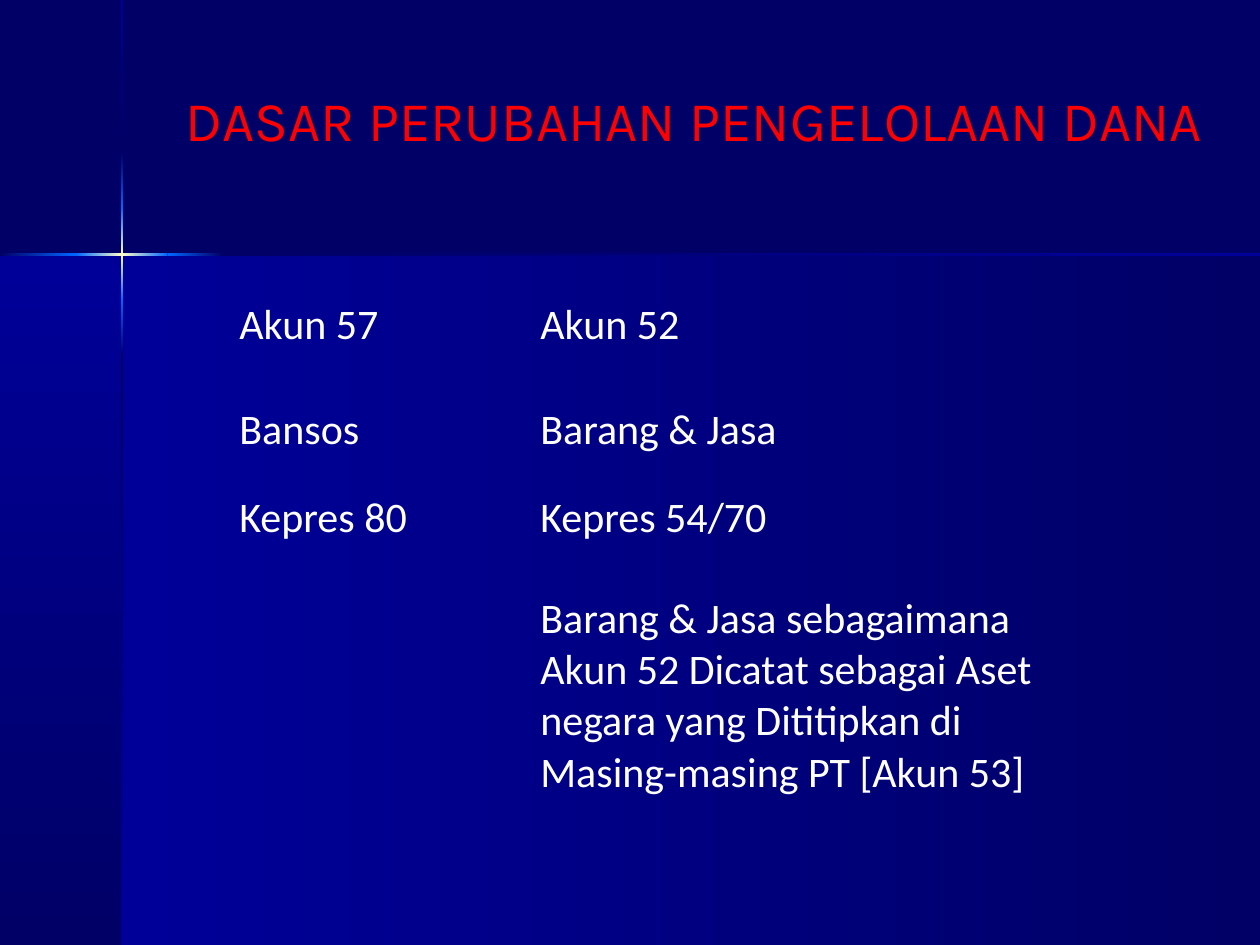
from copy import deepcopy
from pptx import Presentation
from pptx.dml.color import RGBColor
from pptx.enum.shapes import MSO_SHAPE
from pptx.enum.text import MSO_AUTO_SIZE, PP_ALIGN
from pptx.util import Pt

RECT = MSO_SHAPE.RECTANGLE
CENTER = PP_ALIGN.CENTER
GROW = MSO_AUTO_SIZE.SHAPE_TO_FIT_TEXT

NAVY = RGBColor(0x00, 0x00, 0x66)
BLUE = RGBColor(0x00, 0x00, 0x99)
SKY = RGBColor(0x00, 0x66, 0xFF)
CREAM = RGBColor(0xFF, 0xFF, 0xCC)
WHITE = RGBColor(0xFF, 0xFF, 0xFF)
RED = RGBColor(0xFF, 0x00, 0x00)

WIDE, HIGH = 720, 540
TITLE = "DASAR PERUBAHAN PENGELOLAAN DANA"
ROWS = [
    ("Akun 57", "Akun 52"),
    ("Bansos", "Barang & Jasa"),
    ("Kepres 80", "Kepres 54/70"),
    ("", "Barang & Jasa sebagaimana Akun 52 Dicatat sebagai Aset negara "
         "yang Dititipkan di Masing-masing PT [Akun 53]"),
]
COLS = (172, 334.5)
HEIGHTS = (59.8, 50.4, 57.6, 156.2)

# The two lines cross here; each is a chain of gradient strips
CROSS_X, CROSS_Y, THICK = 69.8, 145.5, 1.5
GLOW = (SKY, CREAM, SKY)
ACROSS = [  # start, end, colours
    (0, 43.6, (NAVY, SKY)),
    (43.6, 95.8, GLOW),
    (95.8, 127.4, (SKY, NAVY)),
    (127.4, WIDE, (NAVY, BLUE)),
]
DOWN = [
    (0, 87.2, (BLUE, NAVY)),
    (87.2, 118.9, (NAVY, SKY)),
    (118.9, 171.4, GLOW),
    (171.4, 203, (SKY, NAVY)),
    (203, HIGH, (NAVY, BLUE)),
]


def add_band(slide, x, y, w, h, tones, down=False):
    band = slide.shapes.add_shape(RECT, Pt(x), Pt(y), Pt(w), Pt(h))
    band.shadow.inherit = False
    band.line.fill.background()
    fill = band.fill
    fill.gradient()
    fill.gradient_angle = 270 if down else 0
    if len(tones) == 3:
        stops = band.element.spPr.xpath(".//a:gsLst")[0]
        stops.insert(1, deepcopy(stops[0]))
    for i, (stop, tone) in enumerate(zip(fill.gradient_stops, tones)):
        stop.position = i / (len(tones) - 1)
        stop.color.rgb = tone


def add_run(para, text, font, size, tone):
    run = para.add_run()
    run.text = text
    run.font.name = font
    run.font.size = Pt(size)
    run.font.color.rgb = tone


def main():
    prs = Presentation()
    prs.slide_width, prs.slide_height = Pt(WIDE), Pt(HIGH)
    slide = prs.slides.add_slide(prs.slide_layouts[6])
    back = slide.background.fill
    back.solid()
    back.fore_color.rgb = NAVY

    # Panels below the horizontal line
    drop = HIGH - CROSS_Y
    add_band(slide, CROSS_X, CROSS_Y, WIDE - CROSS_X, drop, (BLUE, NAVY))
    add_band(slide, 0, CROSS_Y, CROSS_X, drop, (BLUE, NAVY), True)

    # Crossing lines
    for top, end, tones in DOWN:
        add_band(slide, CROSS_X - THICK / 2, top, THICK, end - top, tones, True)
    for left, end, tones in ACROSS:
        add_band(slide, left, CROSS_Y - THICK / 2, end - left, THICK, tones)

    # Table
    frame = slide.shapes.add_table(len(ROWS), len(COLS), Pt(129.6), Pt(167.8),
                                   Pt(sum(COLS)), Pt(sum(HEIGHTS)))
    table = frame.table
    table.first_row = table.horz_banding = False
    for col, width in zip(table.columns, COLS):
        col.width = Pt(width)
    for r, (height, texts) in enumerate(zip(HEIGHTS, ROWS)):
        table.rows[r].height = Pt(height)
        for c, text in enumerate(texts):
            cell = table.cell(r, c)
            cell.fill.background()
            if text:
                add_run(cell.text_frame.paragraphs[0], text, "Calibri", 24, WHITE)
    # Plain style without grid lines
    style = table._tbl.tblPr.xpath("./a:tableStyleId")[0]
    style.text = "{2D5ABB26-0587-4C30-8999-92F81FD0307C}"

    # Title
    box = slide.shapes.add_textbox(Pt(84.2), Pt(45.4), Pt(617.8), Pt(46))
    text = box.text_frame
    text.word_wrap = True
    text.auto_size = GROW
    para = text.paragraphs[0]
    para.alignment = CENTER
    para._p.get_or_add_pPr().set("marL", str(Pt(7.2)))
    add_run(para, TITLE, "Karla", 32, RED)

    prs.save("out.pptx")


if __name__ == "__main__":
    main()
